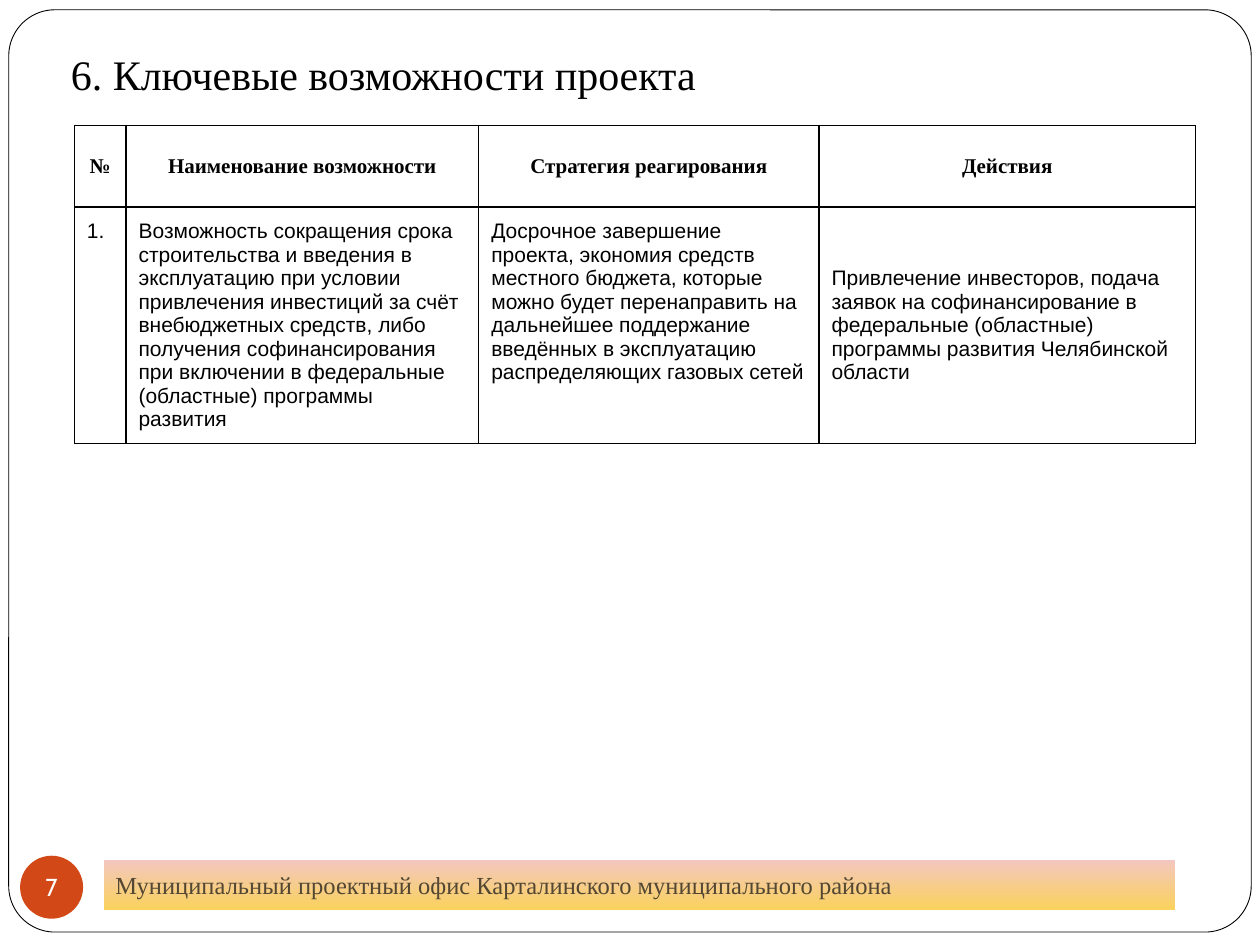
from lxml.etree import SubElement
from pptx import Presentation
from pptx.dml.color import RGBColor
from pptx.enum.shapes import MSO_SHAPE
from pptx.enum.text import MSO_ANCHOR, MSO_AUTO_SIZE, PP_ALIGN
from pptx.oxml import parse_xml
from pptx.oxml.ns import nsdecls, qn
from pptx.util import Pt

COLORS = {
    "black": "000000",
    "white": "FFFFFF",
    "badge": "D34817",
    "footer_top": "F3C7C1",
    "footer_bottom": "FAD25C",
    "footer_text": "534733",
}
SERIF = "Times New Roman"
HEADERS = ["№", "Наименование возможности", "Стратегия реагирования", "Действия"]
OPPORTUNITY = [
    "1.",
    "Возможность сокращения срока строительства и введения в эксплуатацию при "
    "условии привлечения инвестиций за счёт внебюджетных средств, либо получения "
    "софинансирования при включении в федеральные (областные) программы развития",
    "Досрочное завершение проекта, экономия средств местного бюджета, которые "
    "можно будет перенаправить на дальнейшее поддержание введённых в эксплуатацию "
    "распределяющих газовых сетей",
    "Привлечение инвесторов, подача заявок на софинансирование в федеральные "
    "(областные) программы развития Челябинской области",
]


def color(name):
    return RGBColor.from_string(COLORS[name])


def set_margins(target, margin):
    target.margin_left = target.margin_right = Pt(margin)
    target.margin_top = target.margin_bottom = Pt(margin)


def write(frame, text, font_name, size, color_name, alignment=PP_ALIGN.LEFT, bold=False):
    frame.text = text
    paragraph = frame.paragraphs[0]
    paragraph.alignment = alignment
    font = paragraph.font
    font.name, font.size, font.bold = font_name, Pt(size), bold
    font.color.rgb = color(color_name)


def add_plain_shape(slide, kind, box, fill_name):
    shape = slide.shapes.add_shape(kind, *map(Pt, box))
    shape.shadow.inherit = False
    shape.fill.solid()
    shape.fill.fore_color.rgb = color(fill_name)
    shape.line.fill.background()
    return shape


def add_frame(slide, box):
    frame = add_plain_shape(slide, MSO_SHAPE.ROUNDED_RECTANGLE, box, "white")
    frame.adjustments[0] = 0.05
    frame.line.color.rgb = color("black")
    frame.line.width = Pt(0.5)


def place_title(slide, box, text):
    title = slide.shapes.title
    title.left, title.top, title.width, title.height = map(Pt, box)
    # Keep the title in front of the frame
    slide.shapes._spTree.append(title._element)
    frame = title.text_frame
    frame.auto_size = MSO_AUTO_SIZE.NONE
    frame.word_wrap = True
    frame.vertical_anchor = MSO_ANCHOR.TOP
    set_margins(frame, 6.5)
    write(frame, text, SERIF, 24, "black")


def add_footer(slide, box, number, text):
    left, top, width, height = box
    badge_size, bar_offset, bar_height = 36, 48, 28.8

    # Page number badge
    badge = add_plain_shape(slide, MSO_SHAPE.OVAL, (left, top, badge_size, badge_size), "badge")
    badge.text_frame.word_wrap = False
    badge.text_frame.vertical_anchor = MSO_ANCHOR.MIDDLE
    set_margins(badge.text_frame, 0)
    write(badge.text_frame, number, "Cabin", 14, "white", PP_ALIGN.CENTER)

    # Gradient bar with the office name
    bar_box = (left + bar_offset, top + 2.2, width - bar_offset, bar_height)
    bar = add_plain_shape(slide, MSO_SHAPE.RECTANGLE, bar_box, "footer_top")
    bar.fill.gradient()
    bar.fill.gradient_angle = 270
    for stop, name, position in zip(bar.fill.gradient_stops, ("footer_top", "footer_bottom"), (0, 1)):
        stop.color.rgb = color(name)
        stop.position = position
    bar.text_frame.word_wrap = True
    bar.text_frame.vertical_anchor = MSO_ANCHOR.MIDDLE
    set_margins(bar.text_frame, 6.5)
    write(bar.text_frame, text, SERIF, 14, "footer_text")


def add_borders(cell):
    properties = cell._tc.get_or_add_tcPr()
    for index, side in enumerate(("lnL", "lnR", "lnT", "lnB")):
        border = parse_xml(f'<a:{side} {nsdecls("a")} w="{Pt(0.75)}"/>')
        fill = SubElement(border, qn("a:solidFill"))
        SubElement(fill, qn("a:srgbClr"), val=COLORS["black"])
        properties.insert(index, border)


def add_opportunity_table(slide, box):
    left, top, width, height = box
    header_height = 46.8
    shares = [0.41, 2.8, 2.7, 2.99]
    table = slide.shapes.add_table(2, len(shares), *map(Pt, box)).table
    table.horz_banding = False
    for column, share in zip(table.columns, shares):
        column.width = Pt(width * share / sum(shares))
    table.rows[0].height = Pt(header_height)
    table.rows[1].height = Pt(height - header_height)

    for row, texts in enumerate((HEADERS, OPPORTUNITY)):
        is_header = row == 0
        for column, text in enumerate(texts):
            cell = table.cell(row, column)
            cell.fill.background()
            add_borders(cell)
            set_margins(cell, 7.2)
            centred = is_header or column == len(texts) - 1
            cell.vertical_anchor = MSO_ANCHOR.MIDDLE if centred else MSO_ANCHOR.TOP
            write(
                cell.text_frame, text, SERIF if is_header else "Arial", 12, "black",
                PP_ALIGN.CENTER if is_header else PP_ALIGN.LEFT, is_header,
            )


def main():
    presentation = Presentation()
    presentation.slide_width, presentation.slide_height = Pt(720), Pt(540)
    slide = presentation.slides.add_slide(presentation.slide_layouts[5])
    add_frame(slide, (5, 5.6, 710, 527))
    add_footer(
        slide, (11.5, 489, 660, 36), "7",
        "Муниципальный проектный офис Карталинского муниципального района",
    )
    place_title(slide, (34, 21, 554, 37.5), "6. Ключевые возможности проекта")
    add_opportunity_table(slide, (42.5, 71.5, 640.8, 182))
    presentation.save("out.pptx")


if __name__ == "__main__":
    main()
